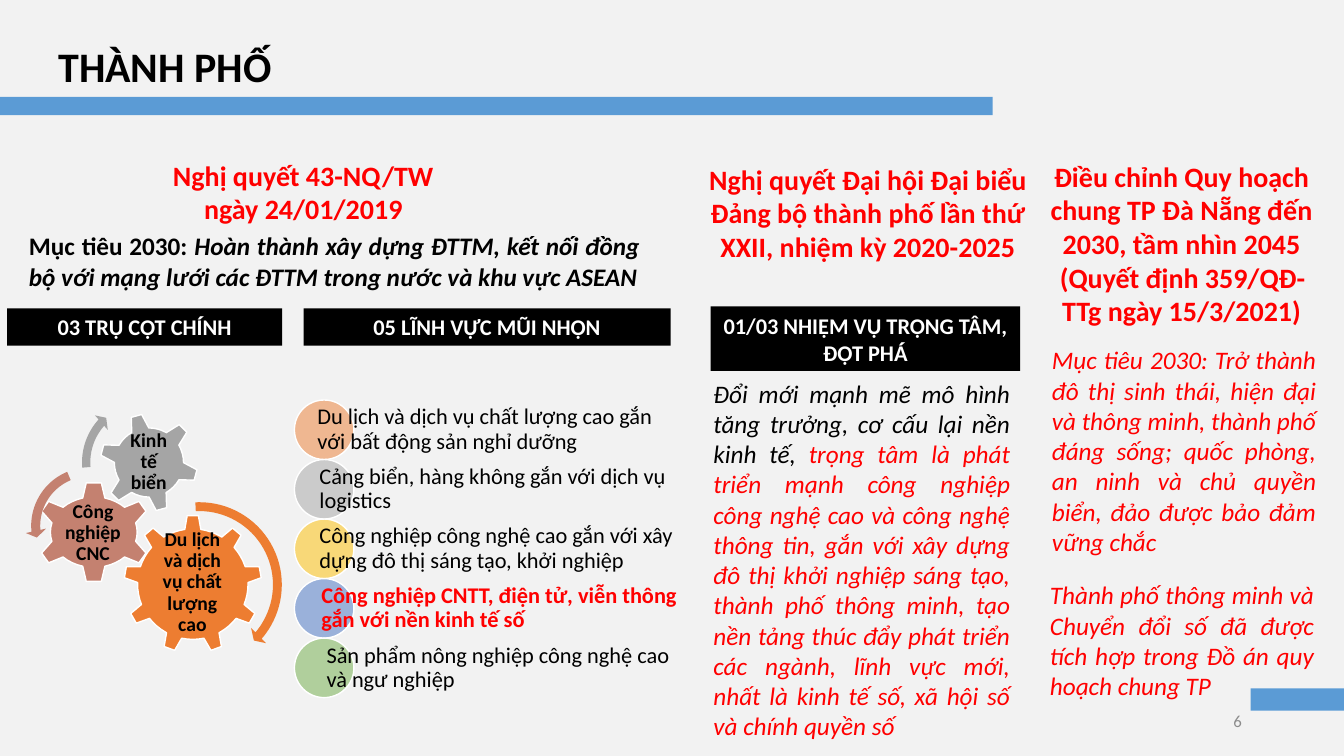
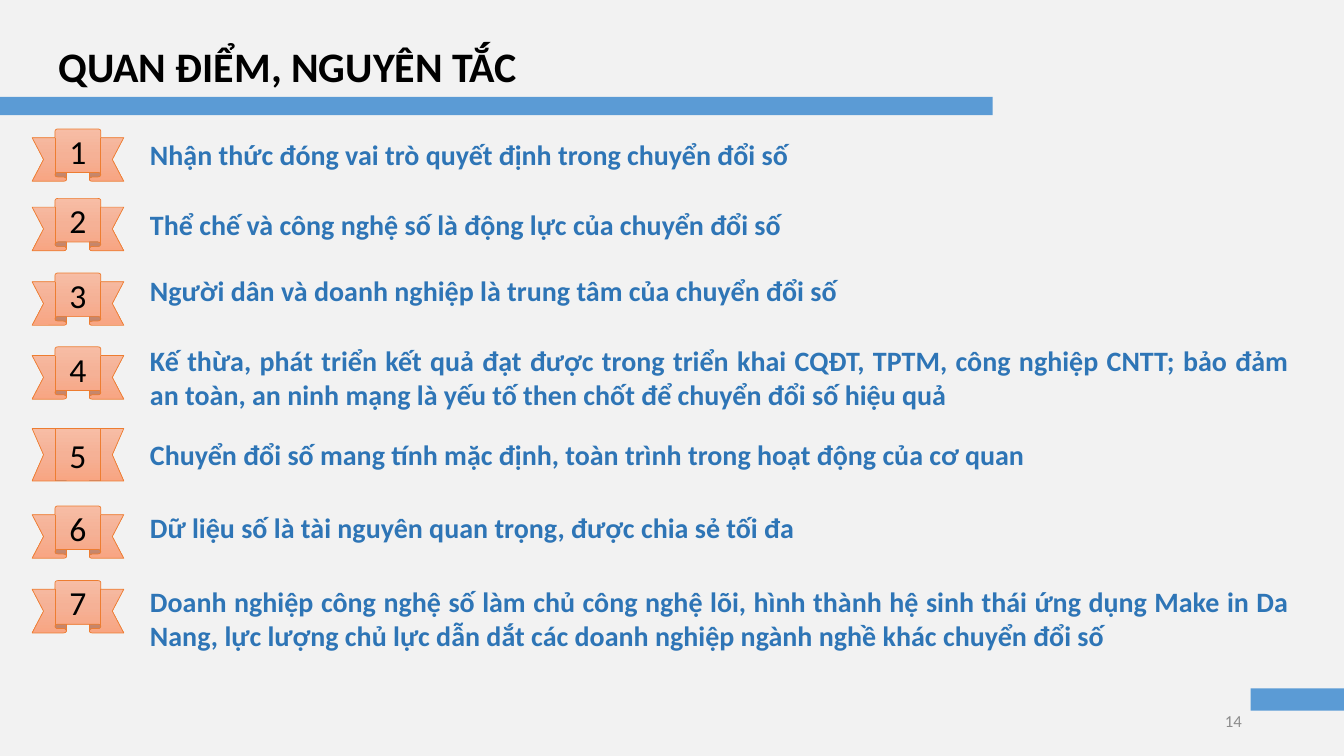
import pptx
import copy
import lxml.etree
import pptx.util
import pptx.dml.color
import pptx.enum.shapes
import pptx.enum.text
import pptx.oxml.ns

Cm = pptx.util.Cm
Pt = pptx.util.Pt
Kind = pptx.enum.shapes.MSO_SHAPE
Align = pptx.enum.text.PP_ALIGN
Anchor = pptx.enum.text.MSO_ANCHOR
qn = pptx.oxml.ns.qn


class Theme:
    font = "Calibri"
    background = "F2F2F2"
    band = "5B9BD5"
    black = "000000"
    white = "FFFFFF"
    red = "FF0000"
    blue = "2E75B6"
    grey = "8C8C8C"
    orange = "ED7D31"
    clay = "C48170"
    silver = "A5A5A5"
    fields = ["ED7D31", "A5A5A5", "FFC000", "4472C4", "70AD47"]
    ribbon = ["F7BDA5", "F5B196", "F8A582"]
    title_size = 30
    digit_size = 24
    heading_size = 20
    body_size = 18
    label_size = 16
    gear_size = 14
    number_size = 12


def add_box(slide, area, kind=None, fill=None, line=None, line_width=1):
    lengths = [Cm(value) for value in area]
    if kind is None:
        return slide.shapes.add_textbox(*lengths)
    shape = slide.shapes.add_shape(kind, *lengths)
    shape.shadow.inherit = False
    if fill:
        shape.fill.solid()
        shape.fill.fore_color.rgb = pptx.dml.color.RGBColor.from_string(fill)
    if line:
        shape.line.color.rgb = pptx.dml.color.RGBColor.from_string(line)
        shape.line.width = Pt(line_width)
    else:
        shape.line.fill.background()
    return shape


def write(shape, paragraphs, size, color=Theme.black, style="", align=Align.LEFT,
          anchor=Anchor.TOP, inset=None, gap=None, line_spacing=None):
    frame = shape.text_frame
    frame.word_wrap = True
    frame.vertical_anchor = anchor
    if inset is not None:
        frame.margin_left = frame.margin_right = Cm(inset)
        frame.margin_top = frame.margin_bottom = Cm(0.05)
    for index, runs in enumerate(paragraphs):
        paragraph = frame.add_paragraph() if index else frame.paragraphs[0]
        paragraph.alignment = align
        if gap:
            paragraph.space_before = paragraph.space_after = Pt(gap)
        if line_spacing:
            paragraph.line_spacing = line_spacing
        for text, run_color, run_style in runs:
            run = paragraph.add_run()
            run.text = text
            run.font.name = Theme.font
            run.font.size = Pt(size)
            run.font.bold = "b" in (run_style or style)
            run.font.italic = "i" in (run_style or style)
            run.font.color.rgb = pptx.dml.color.RGBColor.from_string(run_color or color)


presentation = pptx.Presentation()
presentation.slide_width = Cm(33.87)
presentation.slide_height = Cm(19.05)
background = presentation.slide_master.background.fill
background.solid()
background.fore_color.rgb = pptx.dml.color.RGBColor.from_string(Theme.background)

slides = []
for title, number in [("THÀNH PHỐ", "6"), ("QUAN ĐIỂM, NGUYÊN TẮC", "14")]:
    slide = presentation.slides.add_slide(presentation.slide_layouts[6])
    add_box(slide, (31.52, 17.35, 2.35, 0.56), Kind.RECTANGLE, Theme.band)
    add_box(slide, (0, 2.44, 25.02, 0.46), Kind.RECTANGLE, Theme.band)
    write(add_box(slide, (1.22, 0.89, 28.98, 1.55)), [[(title, None, None)]],
          Theme.title_size, style="b")
    write(add_box(slide, (23.93, 17.65, 7.62, 1.02)), [[(number, None, None)]],
          Theme.number_size, Theme.grey, align=Align.RIGHT, anchor=Anchor.MIDDLE)
    slides.append(slide)
city, principles = slides

headings = [
    ((3.43, 3.86, 8.43, 1.96), ["Nghị quyết 43-NQ/TW ngày 24/01/2019"]),
    ((17.2, 3.96, 9.35, 2.82),
     ["Nghị quyết Đại hội Đại biểu Đảng bộ thành phố lần thứ XXII, nhiệm kỳ 2020-2025"]),
    ((26.01, 3.89, 7.54, 4.52),
     ["Điều chỉnh Quy hoạch chung TP Đà Nẵng đến 2030, tầm nhìn 2045",
      "(Quyết định 359/QĐ-TTg ngày 15/3/2021)"]),
]
for area, lines in headings:
    write(add_box(city, area), [[(line, None, None)] for line in lines],
          Theme.heading_size, Theme.red, "b", Align.CENTER)

banners = [
    ((0.18, 7.77, 6.93, 0.94), "03 TRỤ CỘT CHÍNH"),
    ((7.65, 7.77, 9.25, 0.94), "05 LĨNH VỰC MŨI NHỌN"),
    ((17.91, 7.72, 7.8, 1.63), "01/03 NHIỆM VỤ TRỌNG TÂM, ĐỘT PHÁ"),
]
for area, text in banners:
    write(add_box(city, area, Kind.RECTANGLE, Theme.black), [[(text, None, None)]],
          Theme.label_size, Theme.white, "b", Align.CENTER, Anchor.MIDDLE)

gears = [
    (Kind.GEAR_9, (3.12, 12.98, 3.48, 3.48), 0, Theme.orange,
     (3.81, 13.79, 2.08, 1.78), "Du lịch và dịch vụ chất lượng cao"),
    (Kind.GEAR_6, (0.89, 12.14, 2.95, 2.54), 0, Theme.clay,
     (1.57, 12.8, 1.55, 1.27), "Công nghiệp CNC"),
    (Kind.GEAR_6, (2.51, 10.41, 2.49, 2.49), 345, Theme.silver,
     (3.05, 10.95, 1.4, 1.4), "Kinh tế biển"),
]
for kind, area, rotation, color, label_area, label in gears:
    gear = add_box(city, area, kind, color, Theme.white)
    gear.rotation = rotation
    write(add_box(city, label_area), [[(label, None, None)]], Theme.gear_size, style="b",
          align=Align.CENTER, anchor=Anchor.MIDDLE, inset=0.05, line_spacing=0.9)

arrows = [
    (Kind.CIRCULAR_ARROW, (2.79, 12.5, 4.47, 4.47), Theme.orange,
     (0.05, 2.99, 24.41, 160.33, 0.06)),
    (Kind.LEFT_CIRCULAR_ARROW, (0.64, 11.63, 3.25, 3.25), Theme.clay,
     (0.07, 4.3, 104.89, 148.38, 0.08)),
    (Kind.CIRCULAR_ARROW, (1.93, 9.91, 3.48, 3.48), Theme.silver,
     (0.06, 3.94, 133.14, 105.08, 0.07)),
]
for kind, area, color, adjustments in arrows:
    arrow = add_box(city, area, kind, color)
    for index, value in enumerate(adjustments):
        arrow.adjustments[index] = value

fields = [
    (8, "Du lịch và dịch vụ chất lượng cao gắn với bất động sản nghỉ dưỡng", None, None),
    (8.05, "Cảng biển, hàng không gắn với dịch vụ logistics", None, None),
    (8.05, "Công nghiệp công nghệ cao gắn với xây dựng đô thị sáng tạo, khởi nghiệp", None, None),
    (8.1, "Công nghiệp CNTT, điện tử, viễn thông gắn với nền kinh tế số", Theme.red, "b"),
    (8.23, "Sản phẩm nông nghiệp công nghệ cao và ngư nghiệp", None, None),
]
field_size = 1.5
field_right = 17.13
for index, (left, *run) in enumerate(fields):
    top = 10.08 + index * field_size
    circle = add_box(city, (7.42, top, field_size, field_size), Kind.OVAL,
                     Theme.fields[index], Theme.white)
    color_element = circle._element.spPr.find(qn("a:solidFill"))[0]
    lxml.etree.SubElement(color_element, qn("a:alpha")).set("val", "50000")
    write(add_box(city, (left, top, field_right - left, field_size)), [[run]],
          Theme.label_size, anchor=Anchor.MIDDLE, inset=0, line_spacing=0.9)

bodies = [
    ((0.48, 5.69, 15.9, 1.8), None, [
        ("Mục tiêu 2030: ", None, "b"),
        ("Hoàn thành xây dựng ĐTTM, kết nối đồng bộ với mạng lưới các ĐTTM trong nước "
         "và khu vực ASEAN", None, "bi")]),
    ((17.73, 9.4, 7.98, 9.5), 3, [
        ("Đổi mới mạnh mẽ mô hình tăng trưởng, cơ cấu lại nền kinh tế, ", None, "i"),
        ("trọng tâm là phát triển mạnh công nghiệp công nghệ cao và công nghệ thông tin, "
         "gắn với xây dựng đô thị khởi nghiệp sáng tạo, thành phố thông minh, tạo nền tảng "
         "thúc đẩy phát triển các ngành, lĩnh vực mới, nhất là kinh tế số, xã hội số và "
         "chính quyền số", Theme.red, "i")]),
    ((26.26, 8.56, 7.16, 5.64), 3, [
        ("Mục tiêu 2030: Trở thành đô thị sinh thái, hiện đại và thông minh, thành phố đáng "
         "sống; quốc phòng, an ninh và chủ quyền biển, đảo được bảo đảm vững chắc",
         Theme.red, "i")]),
    ((26.21, 14.48, 7.16, 3.33), 3, [
        ("Thành phố thông minh và Chuyển đổi số đã được tích hợp trong Đồ án quy hoạch "
         "chung TP", Theme.red, "i")]),
]
for area, gap, runs in bodies:
    write(add_box(city, area), [runs], Theme.body_size, align=Align.JUSTIFY, gap=gap)

statements = [
    (3.25, 3.35, 17.78, 1.12, "Nhận thức đóng vai trò quyết định trong chuyển đổi số"),
    (5, 5.11, 16.61, 1.12, "Thể chế và công nghệ số là động lực của chuyển đổi số"),
    (6.88, 6.76, 18.11, 1.12, "Người dân và doanh nghiệp là trung tâm của chuyển đổi số"),
    (8.74, 8.53, 29.21, 1.96,
     "Kế thừa, phát triển kết quả đạt được trong triển khai CQĐT, TPTM, công nghiệp CNTT; "
     "bảo đảm an toàn, an ninh mạng là yếu tố then chốt để chuyển đổi số hiệu quả"),
    (10.8, 10.9, 29.21, 1.12,
     "Chuyển đổi số mang tính mặc định, toàn trình trong hoạt động của cơ quan"),
    (12.75, 12.75, 29.21, 1.12, "Dữ liệu số là tài nguyên quan trọng, được chia sẻ tối đa"),
    (14.63, 14.61, 29.21, 1.96,
     "Doanh nghiệp công nghệ số làm chủ công nghệ lõi, hình thành hệ sinh thái ứng dụng "
     "Make in Da Nang, lực lượng chủ lực dẫn dắt các doanh nghiệp ngành nghề khác chuyển "
     "đổi số"),
]
for number, (ribbon_top, text_top, width, height, text) in enumerate(statements, start=1):
    ribbon = add_box(principles, (0.81, ribbon_top, 2.31, 1.32), Kind.UP_RIBBON,
                     line=Theme.orange, line_width=0.5)
    ribbon.fill.gradient()
    ribbon.fill.gradient_angle = 270
    stop_list = ribbon._element.spPr.find(qn("a:gradFill")).find(qn("a:gsLst"))
    stop_list.insert(1, copy.deepcopy(stop_list[0]))
    for index, stop in enumerate(ribbon.fill.gradient_stops):
        stop.position = index / 2
        stop.color.rgb = pptx.dml.color.RGBColor.from_string(Theme.ribbon[index])
    if number == 5:
        ribbon.adjustments[0] = 0
        ribbon.adjustments[1] = 0.5
    write(ribbon, [[(str(number), None, None)]], Theme.digit_size,
          align=Align.CENTER, anchor=Anchor.MIDDLE)
    write(add_box(principles, (3.53, text_top, width, height)), [[(text, None, None)]],
          Theme.heading_size, Theme.blue, "b", Align.JUSTIFY, gap=3)

presentation.save("out.pptx")
